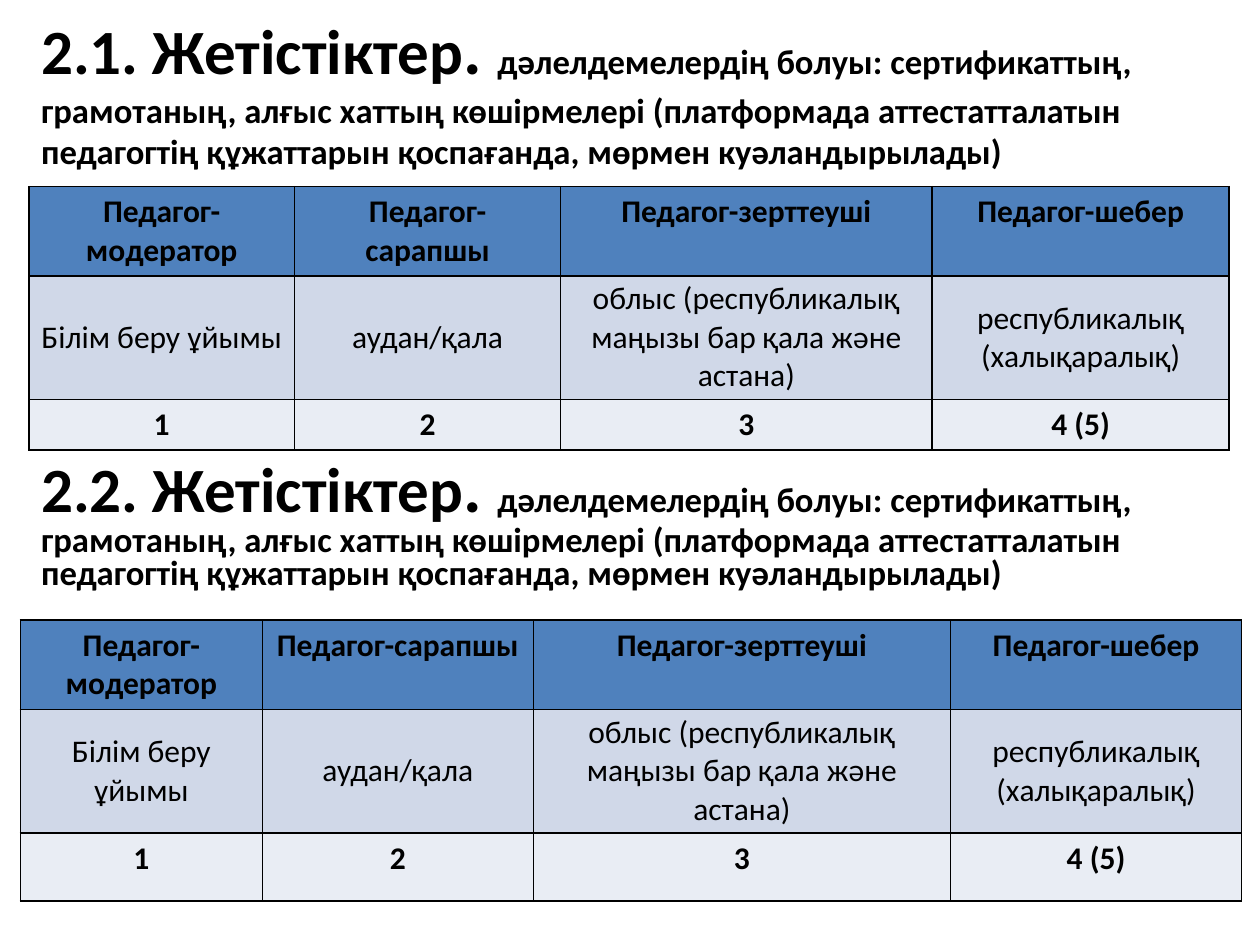
from lxml import etree
from pptx import Presentation
from pptx.dml.color import RGBColor
from pptx.enum.text import MSO_ANCHOR, PP_ALIGN
from pptx.oxml.ns import qn
from pptx.util import Cm, Pt

CENTER = PP_ALIGN.CENTER
TOP = MSO_ANCHOR.TOP
MIDDLE = MSO_ANCHOR.MIDDLE
BLACK = RGBColor(0x00, 0x00, 0x00)
HEADER_BLUE = RGBColor(0x4F, 0x81, 0xBD)
LEVEL_BLUE = RGBColor(0xD0, 0xD8, 0xE8)
SCORE_BLUE = RGBColor(0xE9, 0xED, 0xF4)

EVIDENCE = (
    "дәлелдемелердің болуы: сертификаттың, грамотаның, алғыс хаттың көшірмелері "
    "(платформада аттестатталатын педагогтің құжаттарын қоспағанда, мөрмен куәландырылады)"
)
ROWS = [
    (["Педагог-модератор", "Педагог-сарапшы", "Педагог-зерттеуші", "Педагог-шебер"],
     HEADER_BLUE, True),
    (["Білім беру ұйымы", "аудан/қала",
      "облыс (республикалық маңызы бар қала және астана)",
      "республикалық (халықаралық)"],
     LEVEL_BLUE, False),
    (["1", "2", "3", "4 (5)"], SCORE_BLUE, True),
]


class SlideBuilder:
    font = "Calibri"
    color = BLACK
    border_width = Pt(1)

    def __init__(self, slide):
        self.slide = slide

    def span(self, para, text, size, bold=True):
        span = para.add_run()
        span.text = text
        span.font.name = self.font
        span.font.size = Pt(size)
        span.font.bold = bold
        span.font.color.rgb = self.color

    def heading(self, number, left, top, width, height, line_spacing):
        box = self.slide.shapes.add_textbox(Cm(left), Cm(top), Cm(width), Cm(height))
        frame = box.text_frame
        frame.word_wrap = True
        frame.vertical_anchor = MIDDLE
        para = frame.paragraphs[0]
        para.line_spacing = line_spacing
        self.span(para, f"{number} Жетістіктер", 36)
        self.span(para, ". ", 39.6)
        self.span(para, EVIDENCE, 19.8)

    def table(self, left, top, widths, heights):
        table = self.slide.shapes.add_table(
            len(heights), len(widths), Cm(left), Cm(top),
            Cm(sum(widths)), Cm(sum(heights))).table
        for column, width in zip(table.columns, widths):
            column.width = Cm(width)
        for row, height, (texts, fill, bold) in zip(table.rows, heights, ROWS):
            row.height = Cm(height)
            for cell, text in zip(row.cells, texts):
                self.cell(cell, text, fill, bold)

    def cell(self, cell, text, fill, bold):
        cell.fill.solid()
        cell.fill.fore_color.rgb = fill
        cell.vertical_anchor = TOP if bold else MIDDLE
        if not bold:
            cell.margin_left = cell.margin_right = Cm(0.13)
            cell.margin_top = cell.margin_bottom = Cm(0.08)
        para = cell.text_frame.paragraphs[0]
        para.alignment = CENTER
        self.span(para, text, 18, bold)
        self.borders(cell)

    def borders(self, cell):
        properties = cell._tc.get_or_add_tcPr()
        for index, side in enumerate(("a:lnL", "a:lnR", "a:lnT", "a:lnB")):
            line = etree.Element(qn(side), w=str(self.border_width))
            solid = etree.SubElement(line, qn("a:solidFill"))
            etree.SubElement(solid, qn("a:srgbClr"), val=str(self.color))
            properties.insert(index, line)


def main():
    deck = Presentation()
    deck.slide_width = Cm(25.4)
    deck.slide_height = Cm(19.05)
    page = SlideBuilder(deck.slides.add_slide(deck.slide_layouts[6]))
    page.heading("2.1.", 0.58, 0, 24.21, 3.58, 1.0)
    page.table(0.58, 3.76, [5.36, 5.36, 7.49, 5.99], [1.8, 2.49, 1.02])
    page.heading("2.2.", 0.58, 9.12, 24.82, 2.97, 0.8)
    page.table(0.41, 12.5, [4.88, 5.46, 8.41, 5.87], [1.8, 2.49, 1.37])
    deck.save("out.pptx")


if __name__ == "__main__":
    main()
